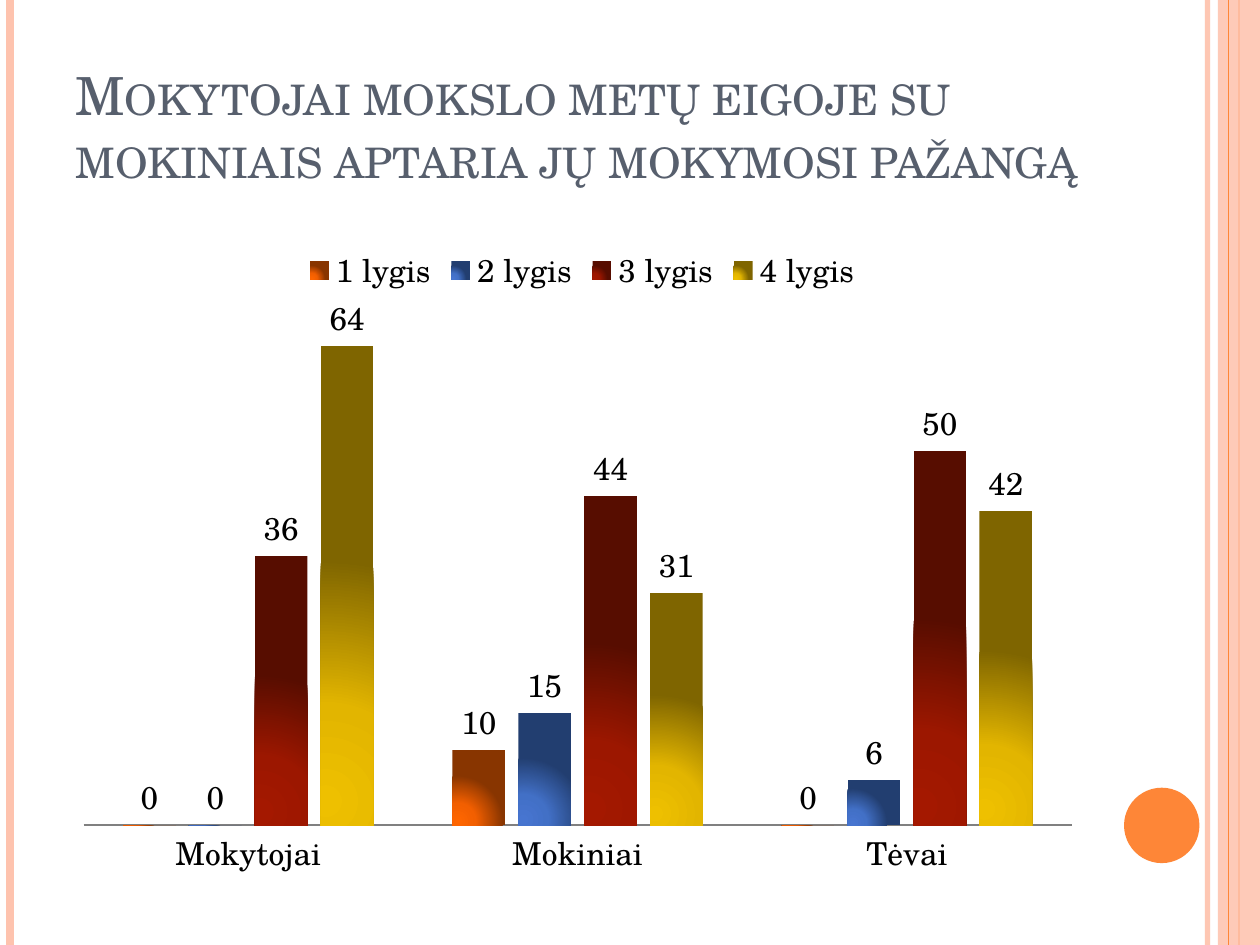
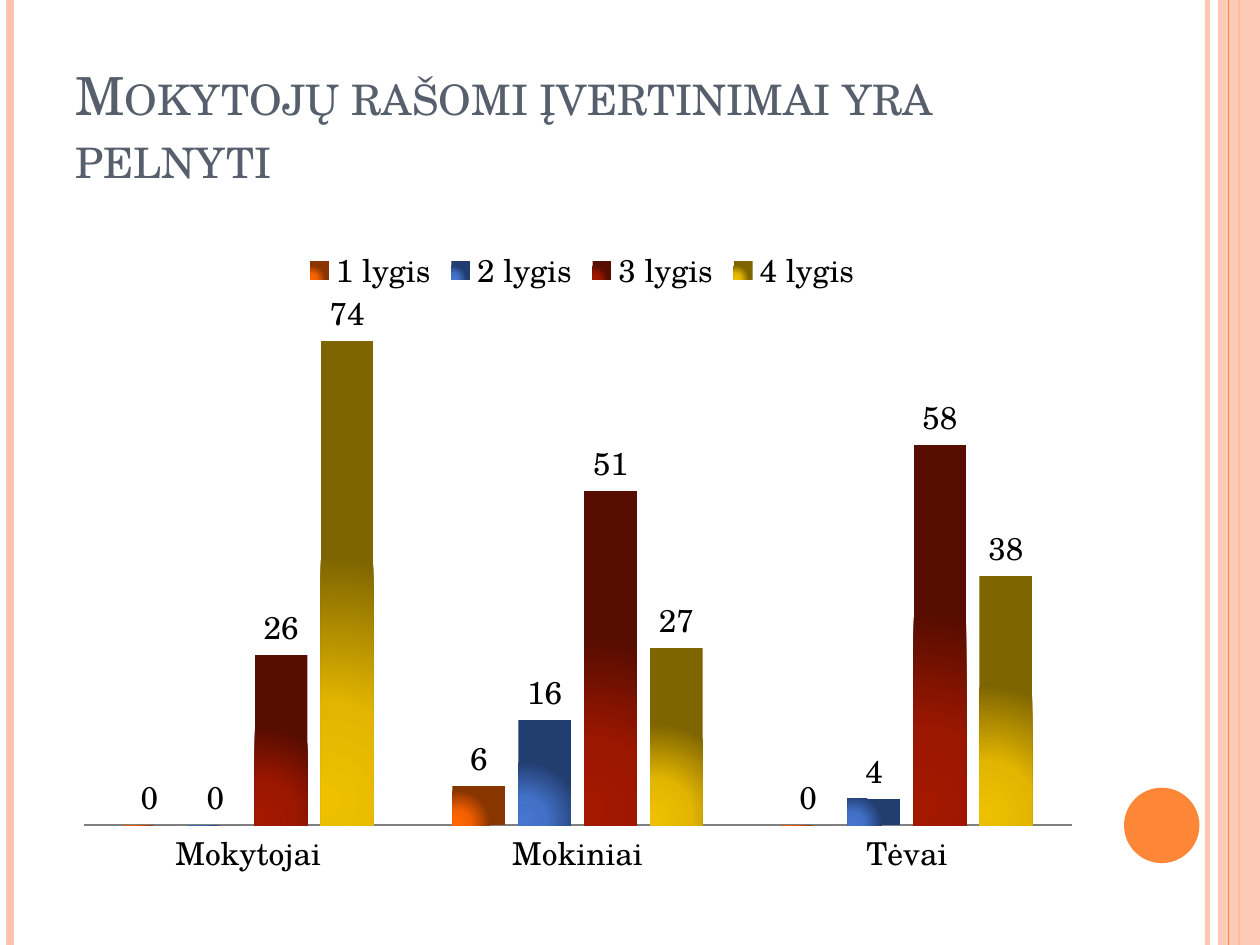
from pptx import Presentation
from pptx.chart.data import CategoryChartData
from pptx.dml.color import RGBColor
from pptx.enum.chart import XL_CHART_TYPE as ChartType
from pptx.enum.chart import XL_LABEL_POSITION as LabelPosition
from pptx.enum.chart import XL_LEGEND_POSITION as LegendPosition
from pptx.enum.chart import XL_TICK_LABEL_POSITION as TickLabelPosition
from pptx.enum.chart import XL_TICK_MARK as TickMark
from pptx.enum.shapes import MSO_CONNECTOR as Connector
from pptx.enum.shapes import MSO_SHAPE as Shape
from pptx.enum.text import MSO_ANCHOR as Anchor
from pptx.oxml import parse_xml
from pptx.oxml.ns import nsdecls, qn
from pptx.oxml.xmlchemy import OxmlElement
from pptx.util import Cm, Pt

FONT = "TeX Gyre Schola"
COLORS = {
    "title": "575F6D",
    "text": "000000",
    "axis": "808080",
    "peach": "FEC3AE",
    "orange": "FE8637",
}
SLIDE_WIDTH, SLIDE_HEIGHT = 25.4, 19.05
CONTENT_LEFT, CONTENT_WIDTH = 1.27, 20.75

CATEGORIES = ["Mokytojai", "Mokiniai", "Tėvai"]
# Each level: inner, middle and outer colour of its radial gradient
LEVELS = {
    "1 lygis": ("FF6600", "F25F00", "883500"),
    "2 lygis": ("4775D0", "4270C6", "223E70"),
    "3 lygis": ("A41800", "9C1700", "570D00"),
    "4 lygis": ("EEC000", "E2B500", "7F6500"),
}
# Title, axis maximum, values by level
SLIDES = [
    ("Mokytojai mokslo metų eigoje su mokiniais aptaria jų mokymosi pažangą",
     70, [(0, 10, 0), (0, 15, 6), (36, 44, 50), (64, 31, 42)]),
    ("Mokytojų rašomi įvertinimai yra pelnyti",
     80, [(0, 6, 0), (0, 16, 4), (26, 51, 58), (74, 27, 38)]),
]


def rgb(name):
    return RGBColor.from_string(COLORS[name])


def set_alpha(element, percent):
    """Make the first solid colour inside the element partly transparent."""
    alpha = OxmlElement("a:alpha")
    alpha.set("val", str(percent * 1000))
    next(element.iter(qn("a:srgbClr"))).append(alpha)


def add_vertical_line(slide, left, color, width, opacity=100):
    line = slide.shapes.add_connector(
        Connector.STRAIGHT, Cm(left), 0, Cm(left), Cm(SLIDE_HEIGHT))
    line.line.color.rgb = rgb(color)
    line.line.width = Pt(width)
    properties = line._element.spPr
    properties.append(OxmlElement("a:effectLst"))
    if opacity < 100:
        set_alpha(properties, opacity)


def add_plain_shape(slide, kind, left, top, width, height, color, opacity=100):
    shape = slide.shapes.add_shape(
        kind, Cm(left), Cm(top), Cm(width), Cm(height))
    shape.shadow.inherit = False
    shape.fill.solid()
    shape.fill.fore_color.rgb = rgb(color)
    shape.line.fill.background()
    if opacity < 100:
        set_alpha(shape._element.spPr, opacity)


def add_decoration(slide):
    """Side stripes and the orange disc shared by all slides."""
    band_left = 24.55
    add_vertical_line(slide, 24.34, "peach", 3, 93)
    add_vertical_line(slide, 0.21, "peach", 4.5)
    add_vertical_line(slide, 24.98, "orange", 1.5)
    add_plain_shape(slide, Shape.RECTANGLE, band_left, 0,
                    SLIDE_WIDTH - band_left, SLIDE_HEIGHT, "peach", 87)
    add_vertical_line(slide, 24.77, "orange", 0.75)
    add_plain_shape(slide, Shape.OVAL, 22.66, 15.88, 1.52, 1.52, "orange")


def add_title(slide, text):
    box = slide.shapes.add_textbox(
        Cm(CONTENT_LEFT), Cm(0.76), Cm(CONTENT_WIDTH), Cm(3.18))
    frame = box.text_frame
    frame.word_wrap = True
    frame.vertical_anchor = Anchor.BOTTOM
    frame.text = text
    font = frame.paragraphs[0].runs[0].font
    font.name = FONT
    font.size = Pt(30)
    font.color.rgb = rgb("title")
    font._element.set("cap", "small")


def set_layout(element, index, **settings):
    """Place a chart part by fractions of the chart area."""
    for old_layout in element.findall(qn("c:layout")):
        element.remove(old_layout)
    values = "".join(
        f'<c:{name} val="{value}"/>' for name, value in settings.items())
    element.insert(index, parse_xml(
        f'<c:layout {nsdecls("c")}><c:manualLayout>{values}'
        '</c:manualLayout></c:layout>'))


def fill_radially(series, colors):
    """Gradient that spreads from the lower left corner of each column."""
    stops = "".join(
        f'<a:gs pos="{position * 1000}"><a:srgbClr val="{color}"/></a:gs>'
        for position, color in zip((0, 40, 100), colors))
    series._element.get_or_add_spPr().append(parse_xml(
        f'<a:gradFill {nsdecls("a")} rotWithShape="1"><a:gsLst>{stops}</a:gsLst>'
        '<a:path path="circle"><a:fillToRect l="10000" t="95000" r="90000"'
        ' b="5000"/></a:path></a:gradFill>'))


def format_axes(chart, maximum):
    value_axis = chart.value_axis
    value_axis.visible = False
    value_axis.has_major_gridlines = False
    value_axis.minimum_scale = 0
    value_axis.maximum_scale = maximum
    category_axis = chart.category_axis
    category_axis.major_tick_mark = TickMark.NONE
    category_axis.minor_tick_mark = TickMark.NONE
    category_axis.tick_label_position = TickLabelPosition.NEXT_TO_AXIS
    category_axis.format.line.color.rgb = rgb("axis")
    category_axis.format.line.width = Pt(0.75)


def add_level_chart(slide, maximum, level_values):
    data = CategoryChartData()
    data.categories = CATEGORIES
    for level, values in zip(LEVELS, level_values):
        data.add_series(level, values)
    chart = slide.shapes.add_chart(
        ChartType.COLUMN_CLUSTERED, Cm(CONTENT_LEFT), Cm(4.45),
        Cm(CONTENT_WIDTH), Cm(13.54), data).chart
    chart.has_title = False
    chart.font.name = FONT
    chart.font.size = Pt(18)
    chart.font.color.rgb = rgb("text")
    format_axes(chart, maximum)

    # Columns and their values
    plot = chart.plots[0]
    plot.vary_by_categories = False
    plot.gap_width = 150
    plot.overlap = -25
    plot.has_data_labels = True
    plot.data_labels.show_value = True
    plot.data_labels.position = LabelPosition.OUTSIDE_END
    for series, colors in zip(plot.series, LEVELS.values()):
        series.invert_if_negative = False
        fill_radially(series, colors)

    # Legend above the plot
    chart.has_legend = True
    chart.legend.position = LegendPosition.TOP
    chart.legend.include_in_layout = False
    set_layout(chart.legend._element, 1,
               xMode="edge", yMode="edge", x=0.23, y=0.03)
    set_layout(chart._chartSpace.chart.plotArea, 0,
               layoutTarget="inner", xMode="edge", yMode="edge",
               x=0.02, y=0.12, w=0.96, h=0.78)


def main():
    presentation = Presentation()
    presentation.slide_width = Cm(SLIDE_WIDTH)
    presentation.slide_height = Cm(SLIDE_HEIGHT)
    blank_layout = presentation.slide_layouts[6]
    for title, maximum, level_values in SLIDES:
        slide = presentation.slides.add_slide(blank_layout)
        add_decoration(slide)
        add_title(slide, title)
        add_level_chart(slide, maximum, level_values)
    presentation.save("out.pptx")


if __name__ == "__main__":
    main()
